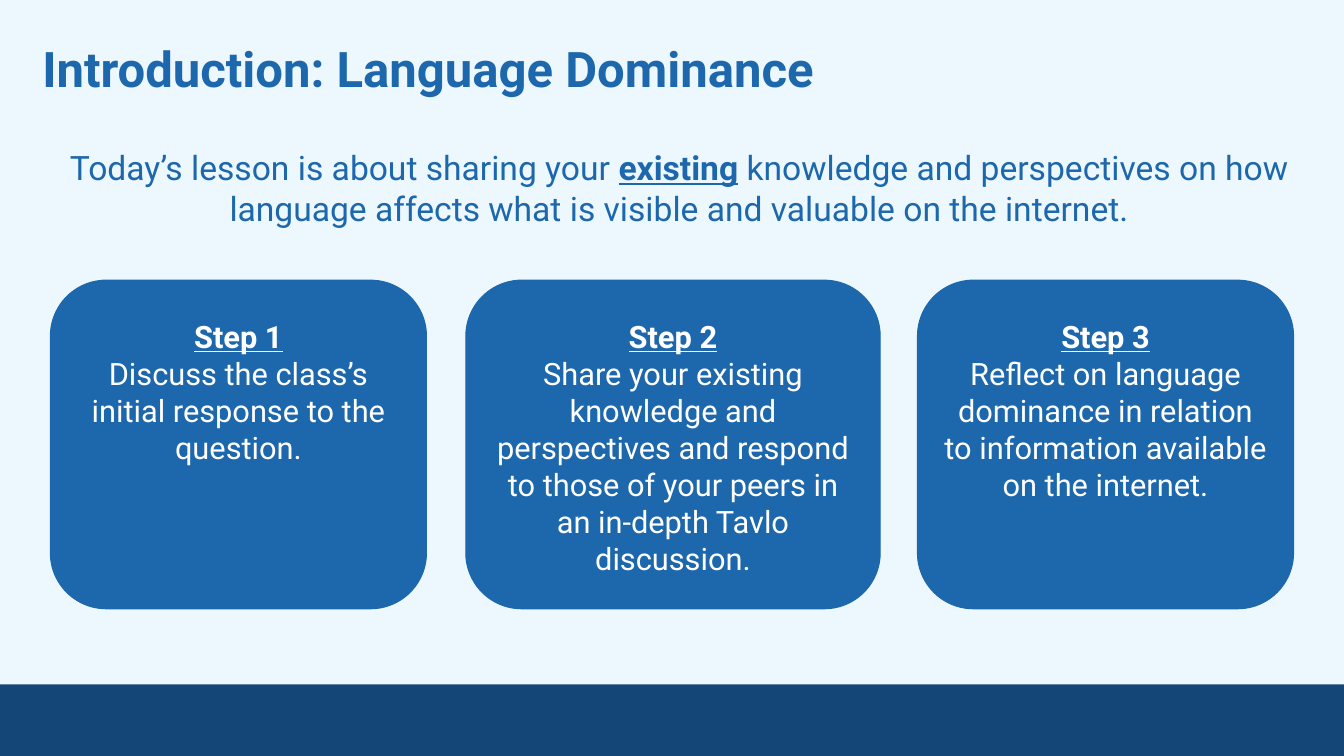
from dataclasses import dataclass

from pptx import Presentation
from pptx.dml.color import RGBColor
from pptx.enum.shapes import MSO_SHAPE
from pptx.enum.text import MSO_ANCHOR, MSO_AUTO_SIZE, PP_ALIGN
from pptx.slide import Slide
from pptx.text.text import Font, TextFrame
from pptx.util import Emu, Pt

EMU_PER_PX = 9144
FONT_NAME = "Roboto"
PALE_BLUE = RGBColor(0xEC, 0xF8, 0xFE)
BLUE = RGBColor(0x1D, 0x67, 0xAC)
NAVY = RGBColor(0x14, 0x47, 0x77)
WHITE = RGBColor(0xFF, 0xFF, 0xFF)
RECTANGLE = MSO_SHAPE.RECTANGLE
ROUNDED_RECTANGLE = MSO_SHAPE.ROUNDED_RECTANGLE
TOP = MSO_ANCHOR.TOP
BOTTOM = MSO_ANCHOR.BOTTOM
CENTER = PP_ALIGN.CENTER
LEFT = PP_ALIGN.LEFT
NO_AUTOFIT = MSO_AUTO_SIZE.NONE
TITLE_ONLY_LAYOUT = 5
STEP_TOP = 278
STEP_HEIGHT = 326


@dataclass
class Step:
    left: int
    width: int
    description: str


STEPS = [
    Step(50, 373, "Discuss the class’s initial response to the question."),
    Step(462, 411, "Share your existing knowledge and perspectives and respond "
                   "to those of your peers in an in-depth Tavlo discussion."),
    Step(910, 373, "Reflect on language dominance in relation to information "
                   "available on the internet."),
]


def px(length: int) -> Emu:
    return Emu(length * EMU_PER_PX)


def box(left: int, top: int, width: int, height: int) -> tuple[Emu, Emu, Emu, Emu]:
    return px(left), px(top), px(width), px(height)


def format_font(font: Font, size: int, color: RGBColor,
                bold: bool = False, underline: bool = False) -> None:
    font.name = FONT_NAME
    font.size = Pt(size)
    font.color.rgb = color
    font.bold = bold
    font.underline = underline


def format_frame(frame: TextFrame, inset: int, top_inset: int,
                 anchor: MSO_ANCHOR = TOP) -> None:
    frame.word_wrap = True
    frame.auto_size = NO_AUTOFIT
    frame.vertical_anchor = anchor
    frame.margin_left = frame.margin_right = frame.margin_bottom = px(inset)
    frame.margin_top = px(top_inset)


def add_footer(slide: Slide) -> None:
    footer = slide.shapes.add_shape(RECTANGLE, *box(-2, 679, 1337, 71))
    footer.shadow.inherit = False
    footer.fill.solid()
    footer.fill.fore_color.rgb = NAVY
    footer.line.fill.background()


def set_title(slide: Slide) -> None:
    title = slide.shapes.title
    title.left, title.top, title.width, title.height = box(29, 24, 1219, 86)
    frame = title.text_frame
    format_frame(frame, 13, 13, BOTTOM)
    frame.text = "Introduction: Language Dominance"
    paragraph = frame.paragraphs[0]
    paragraph.alignment = LEFT
    format_font(paragraph.runs[0].font, 35, BLUE, bold=True)


def add_introduction(slide: Slide) -> None:
    frame = slide.shapes.add_textbox(*box(22, 136, 1303, 101)).text_frame
    format_frame(frame, 10, 10)
    paragraph = frame.paragraphs[0]
    paragraph.alignment = CENTER
    for text, emphasis in (
        ("Today’s lesson is about sharing your ", False),
        ("existing", True),
        (" knowledge and perspectives on how language affects "
         "what is visible and valuable on the internet.", False),
    ):
        run = paragraph.add_run()
        run.text = text
        format_font(run.font, 24, BLUE, bold=emphasis, underline=emphasis)


def add_step(slide: Slide, number: int, step: Step) -> None:
    card = slide.shapes.add_shape(
        ROUNDED_RECTANGLE, *box(step.left, STEP_TOP, step.width, STEP_HEIGHT))
    card.shadow.inherit = False
    card.adjustments[0] = 0.17
    card.fill.solid()
    card.fill.fore_color.rgb = BLUE
    card.line.color.rgb = BLUE
    card.line.width = Pt(0.75)
    frame = card.text_frame
    format_frame(frame, 10, 21)
    frame.text = f"Step {number}\n{step.description}"
    for index, paragraph in enumerate(frame.paragraphs):
        paragraph.alignment = CENTER
        heading = index == 0
        format_font(paragraph.runs[0].font, 22, WHITE, bold=heading, underline=heading)


def main() -> None:
    presentation = Presentation()
    presentation.slide_width = px(1333)
    presentation.slide_height = px(750)
    slide = presentation.slides.add_slide(presentation.slide_layouts[TITLE_ONLY_LAYOUT])
    slide.background.fill.solid()
    slide.background.fill.fore_color.rgb = PALE_BLUE
    add_footer(slide)
    set_title(slide)
    add_introduction(slide)
    for number, step in enumerate(STEPS, start=1):
        add_step(slide, number, step)
    presentation.save("out.pptx")


if __name__ == "__main__":
    main()
